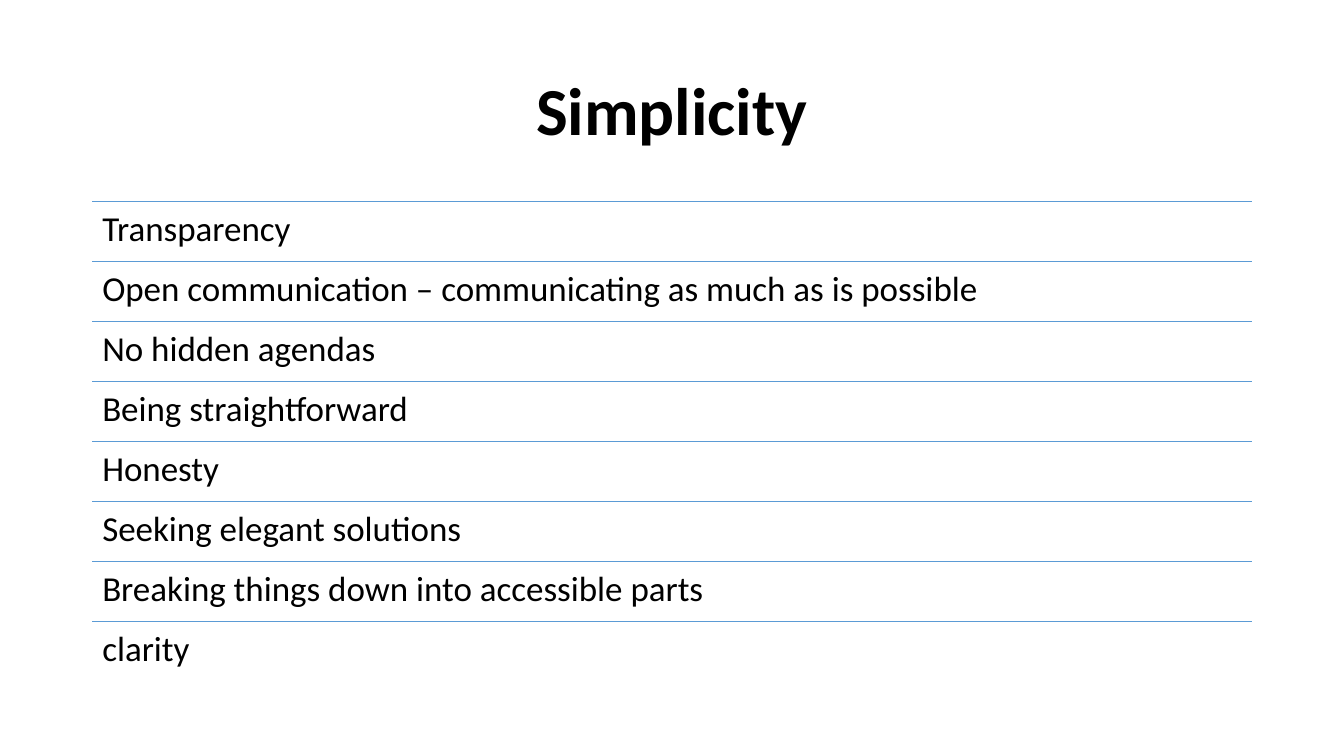
from lxml.etree import SubElement
from pptx import Presentation
from pptx.dml.color import RGBColor
from pptx.enum.shapes import MSO_CONNECTOR
from pptx.enum.text import MSO_ANCHOR, PP_ALIGN
from pptx.oxml.ns import qn
from pptx.util import Pt

TITLE = "Simplicity"
VALUES = [
    "Transparency",
    "Open communication – communicating as much as is possible",
    "No hidden agendas",
    "Being straightforward",
    "Honesty",
    "Seeking elegant solutions",
    "Breaking things down into accessible parts",
    "clarity",
]
COLORS = {"text": "000000", "rule": "5B9BD5"}
FONT = "Calibri"
LEFT, WIDTH = 66, 828
TITLE_TOP, TITLE_HEIGHT = 28.75, 104.4
LIST_TOP, ROW_HEIGHT = 143.9, 42.84
INSET = 7.2


def format_paragraph(paragraph, size, bold, alignment):
    paragraph.alignment = alignment
    paragraph.line_spacing = 0.9
    paragraph.font.name = FONT
    paragraph.font.size = Pt(size)
    paragraph.font.bold = bold
    paragraph.font.color.rgb = RGBColor.from_string(COLORS["text"])


def add_title(slide):
    title = slide.shapes.title
    title.left, title.top = Pt(LEFT), Pt(TITLE_TOP)
    title.width, title.height = Pt(WIDTH), Pt(TITLE_HEIGHT)
    title.text_frame.text = TITLE
    title.text_frame.vertical_anchor = MSO_ANCHOR.MIDDLE
    format_paragraph(title.text_frame.paragraphs[0], 48, True, PP_ALIGN.CENTER)


def add_rule(slide, top):
    rule = slide.shapes.add_connector(
        MSO_CONNECTOR.STRAIGHT, Pt(LEFT), Pt(top), Pt(LEFT + WIDTH), Pt(top)
    )
    rule.line.color.rgb = RGBColor.from_string(COLORS["rule"])
    rule.line.width = Pt(1)
    SubElement(rule._element.spPr, qn("a:effectLst"))


def add_value(slide, text, top):
    box = slide.shapes.add_textbox(Pt(LEFT), Pt(top), Pt(WIDTH), Pt(ROW_HEIGHT))
    frame = box.text_frame
    frame.word_wrap = True
    frame.vertical_anchor = MSO_ANCHOR.TOP
    frame.margin_left = frame.margin_right = Pt(INSET)
    frame.margin_top = frame.margin_bottom = Pt(INSET)
    frame.text = text
    format_paragraph(frame.paragraphs[0], 25, False, PP_ALIGN.LEFT)


def main():
    presentation = Presentation()
    presentation.slide_width, presentation.slide_height = Pt(960), Pt(540)
    slide = presentation.slides.add_slide(presentation.slide_layouts[5])
    add_title(slide)
    for index, text in enumerate(VALUES):
        top = LIST_TOP + index * ROW_HEIGHT
        add_rule(slide, top)
        add_value(slide, text, top)
    presentation.save("out.pptx")


if __name__ == "__main__":
    main()
